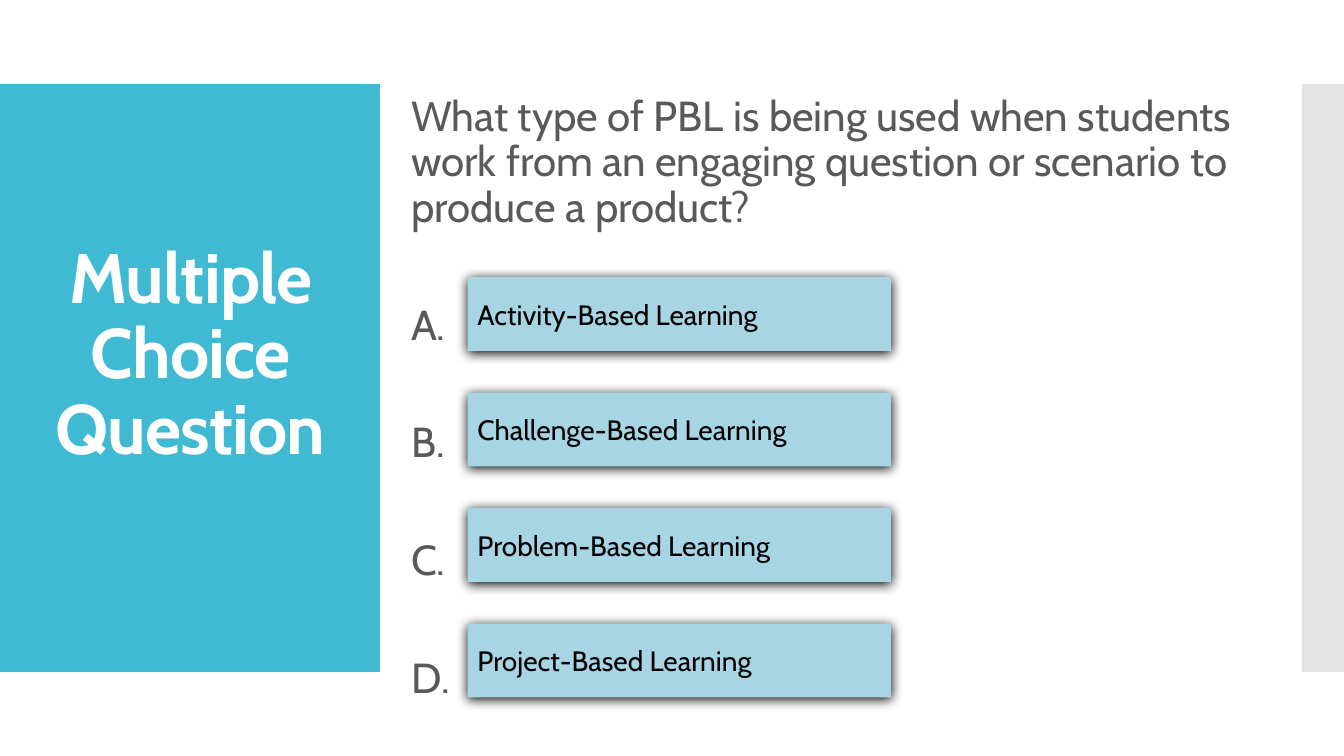
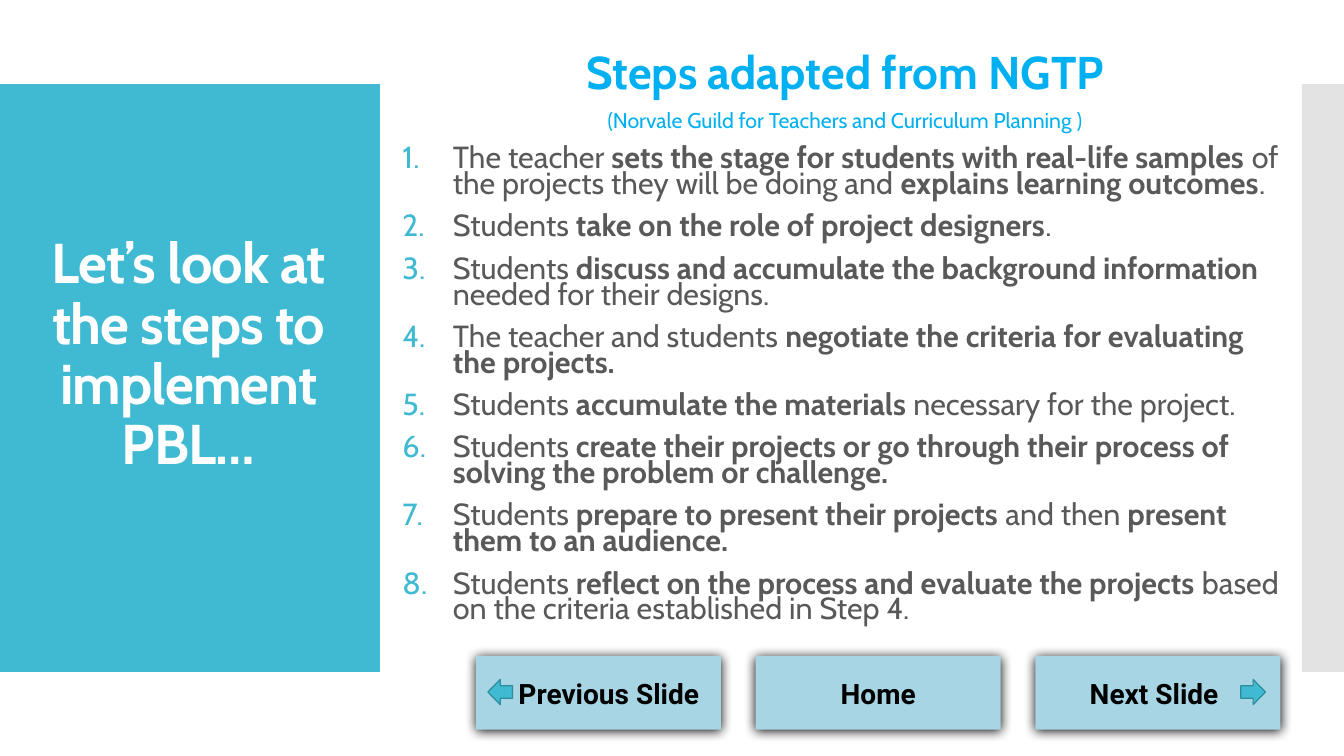
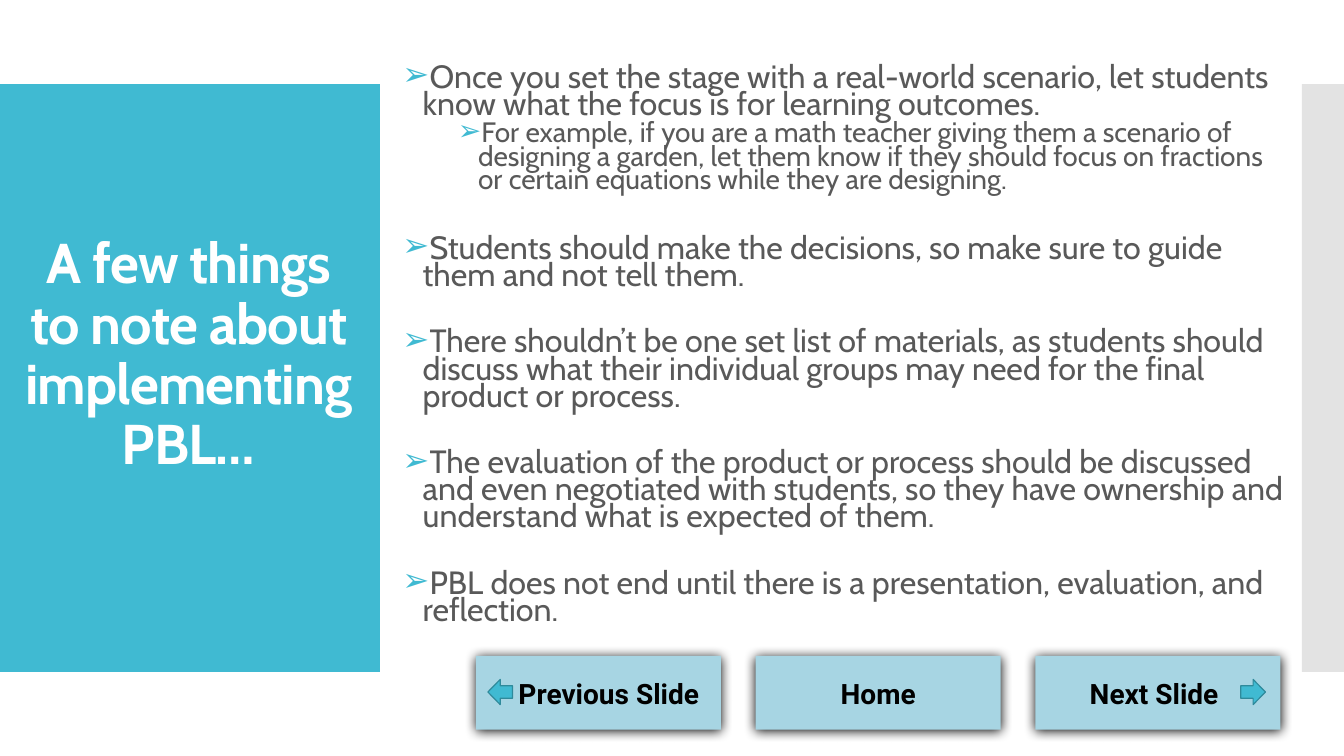
from lxml.etree import SubElement
from pptx import Presentation
from pptx.dml.color import RGBColor
from pptx.enum.shapes import MSO_SHAPE
from pptx.enum.text import MSO_ANCHOR, MSO_AUTO_SIZE, PP_ALIGN
from pptx.oxml.ns import qn
from pptx.util import Pt

hue = RGBColor.from_string
TEAL, PALE, EDGE, BAND = "40BAD2", "A7D5E3", "2F8A9B", "C8C8C8"
GREY, SKY, WHITE, BLACK = "595959", "00B0F0", "FFFFFF", "000000"


def draw(page, kind, at, fill, line=None, glow=False):
    shape = page.shapes.add_shape(kind, *map(Pt, at))
    shape.fill.solid()
    shape.fill.fore_color.rgb = hue(fill)
    if line:
        shape.line.color.rgb = hue(line)
        shape.line.width = Pt(0.85)
    else:
        shape.line.fill.background()
    shape.shadow.inherit = False
    if glow:
        effect = shape.element.spPr.find(qn("a:effectLst"))
        shade = SubElement(effect, qn("a:outerShdw"), blurRad=str(Pt(8.5)),
                           dist=str(Pt(1)), dir="5400000", rotWithShape="0")
        SubElement(shade, qn("a:srgbClr"), val=BLACK)
    return shape


def write(para, text, size, color, form, name="Cabin", bold=False):
    """Fill a paragraph; text between asterisks is bold."""
    for key, val in form.items():
        setattr(para, key, val)
    for num, part in enumerate(text.split("*")):
        if part:
            run = para.add_run()
            run.text = part
            font = {"name": name, "size": Pt(size), "bold": bold or num % 2 == 1}
            for key, val in font.items():
                setattr(run.font, key, val)
            run.font.color.rgb = hue(color)


deck = Presentation()
deck.slide_width, deck.slide_height = Pt(960), Pt(540)
layout = deck.slide_layouts[5]

# Titles: text, size, left, width
heads = [
    ("Multiple Choice Question", 50, 20, 232),
    ("Let’s look at the steps to implement PBL…", 40, 8.6, 252),
    ("A few things to note about implementing PBL…", 40, 8.6, 252),
]
pages = []
for text, size, left, width in heads:
    page = deck.slides.add_slide(layout)
    title = page.shapes.title
    place = {"left": left, "top": 73.4, "width": width, "height": 362}
    for key, val in place.items():
        setattr(title, key, Pt(val))
    frame = title.text_frame
    frame.auto_size, frame.word_wrap = MSO_AUTO_SIZE.NONE, True
    frame.vertical_anchor = MSO_ANCHOR.MIDDLE
    para = frame.paragraphs[0]
    write(para, text, size, WHITE,
          {"alignment": PP_ALIGN.CENTER, "line_spacing": 0.9}, bold=True)
    para.runs[0].font._element.set("spc", "-60")
    pages.append(page)
quiz, steps, notes = pages

# Side bands, moved to the layout that all slides share
left = draw(quiz, MSO_SHAPE.RECTANGLE, (0, 60, 271.3, 420), TEAL)
right = draw(quiz, MSO_SHAPE.RECTANGLE, (930, 60, 30, 420), BAND)
tint = right.element.spPr.find(".//" + qn("a:srgbClr"))
SubElement(tint, qn("a:alpha"), val="50000")
for band in (left, right):
    layout.element.cSld.spTree.insert(2, band.element)

# Body boxes: place and anchor
boxes = [
    (quiz, (286.6, 64.4, 617.8, 456), MSO_ANCHOR.TOP),
    (steps, (280.4, 40, 646.6, 408), MSO_ANCHOR.MIDDLE),
    (notes, (280.4, 40.3, 646.6, 414.6), MSO_ANCHOR.MIDDLE),
]
frames = []
for page, at, anchor in boxes:
    frame = page.shapes.add_textbox(*map(Pt, at)).text_frame
    frame.word_wrap, frame.vertical_anchor = True, anchor
    frames.append(frame)
ask, list_, tips = frames

# Question and answers
write(ask.paragraphs[0], "What type of PBL is being used when students work from "
      "an engaging question or scenario to produce a product?",
      30, GREY, {"line_spacing": 0.9})
for num, kind in enumerate(("Activity", "Challenge", "Problem", "Project")):
    write(ask.add_paragraph(), "ABCD"[num] + ".", 30, GREY,
          {"line_spacing": 2.0, "space_before": Pt(12)})
    card = draw(quiz, MSO_SHAPE.RECTANGLE, (334, 198 + 82.5 * num, 302.4, 52.6),
                PALE, glow=True)
    card.text_frame.vertical_anchor = MSO_ANCHOR.MIDDLE
    write(card.text_frame.paragraphs[0], kind + "-Based Learning", 20, BLACK,
          {"alignment": PP_ALIGN.LEFT})

# Steps
tight = {"line_spacing": 0.7, "space_before": Pt(12)}
mid = {**tight, "alignment": PP_ALIGN.CENTER}
write(list_.paragraphs[0], "Steps adapted from NGTP", 32.8, SKY, mid, bold=True)
write(list_.add_paragraph(),
      "(Norvale Guild for Teachers and Curriculum Planning )", 15.2, SKY, mid)
items = [
    "The teacher *sets the stage for students with real-life samples *of the "
    "projects they will be doing and *explains learning outcomes*.",
    "Students *take on the role of project designers*.",
    "Students *discuss and accumulate the background information* needed for "
    "their designs.",
    "The teacher and students *negotiate the criteria for evaluating the projects.*",
    "Students *accumulate the materials* necessary for the project.",
    "Students *create their projects or go through their process of solving the "
    "problem or challenge.*",
    "Students *prepare to present their projects *and then *present them to an "
    "audience.*",
    "Students *reflect on the process and evaluate the projects* based on the "
    "criteria established in Step 4.",
]
marked = []
for text in items:
    para = list_.add_paragraph()
    write(para, text, 21.8, GREY, tight)
    marked.append((para, 36, 36, "a:buAutoNum", {"type": "arabicPeriod"}))

# Notes: level, space before, text
points = [
    (0, 12, "Once you set the stage with a real-world scenario, let students know "
     "what the focus is for learning outcomes."),
    (1, 2.5, "For example, if you are a math teacher giving them a scenario of "
     "designing a garden, let them know if they should focus on fractions or "
     "certain equations while they are designing."),
    (0, 28.3, "Students should make the decisions, so make sure to guide them and "
     "not tell them."),
    (0, 28.3, "There shouldn’t be one set list of materials, as students should "
     "discuss what their individual groups may need for the final product or "
     "process."),
    (0, 28.3, "The evaluation of the product or process should be discussed and "
     "even negotiated with students, so they have ownership and understand what "
     "is expected of them."),
    (0, 28.3, "PBL does not end until there is a presentation, evaluation, and "
     "reflection."),
]
for num, (level, gap, text) in enumerate(points):
    para = tips.add_paragraph() if num else tips.paragraphs[0]
    write(para, text, 20 if level else 23, GREY,
          {"level": level, "line_spacing": 0.7, "space_before": Pt(gap),
           "space_after": Pt(2.5 * level)})
    marked.append((para, 54 if level else 14.4, 14.4, "a:buChar", {"char": "➢"}))

# Bullets and numbers
for para, left, hang, tag, mark in marked:
    props = para._p.get_or_add_pPr()
    props.set("marL", str(Pt(left)))
    props.set("indent", str(-Pt(hang)))
    SubElement(SubElement(props, qn("a:buClr")), qn("a:srgbClr"), val=TEAL)
    SubElement(props, qn("a:buFont"), typeface="Cabin")
    SubElement(props, qn(tag), **mark)

# Navigation buttons: text, left and right inset, arrow, arrow left
links = [
    ("Previous Slide", 22, 7.2, MSO_SHAPE.LEFT_ARROW, 348.5),
    ("Home", 7.2, 7.2, None, 0),
    ("Next Slide", 7.2, 12.4, MSO_SHAPE.RIGHT_ARROW, 886.3),
]
for page in (steps, notes):
    for num, (text, left, right, arrow, spot) in enumerate(links):
        key = draw(page, MSO_SHAPE.RECTANGLE, (340 + 199.8 * num, 468.6, 175, 52.6),
                   PALE, glow=True)
        frame = key.text_frame
        frame.margin_left, frame.margin_right = Pt(left), Pt(right)
        frame.vertical_anchor = MSO_ANCHOR.MIDDLE
        write(frame.paragraphs[0], text, 20, BLACK,
              {"alignment": PP_ALIGN.CENTER}, "Roboto", True)
        if arrow:
            draw(page, arrow, (spot, 485.3, 17.6, 18), TEAL, EDGE)

deck.save("out.pptx")
